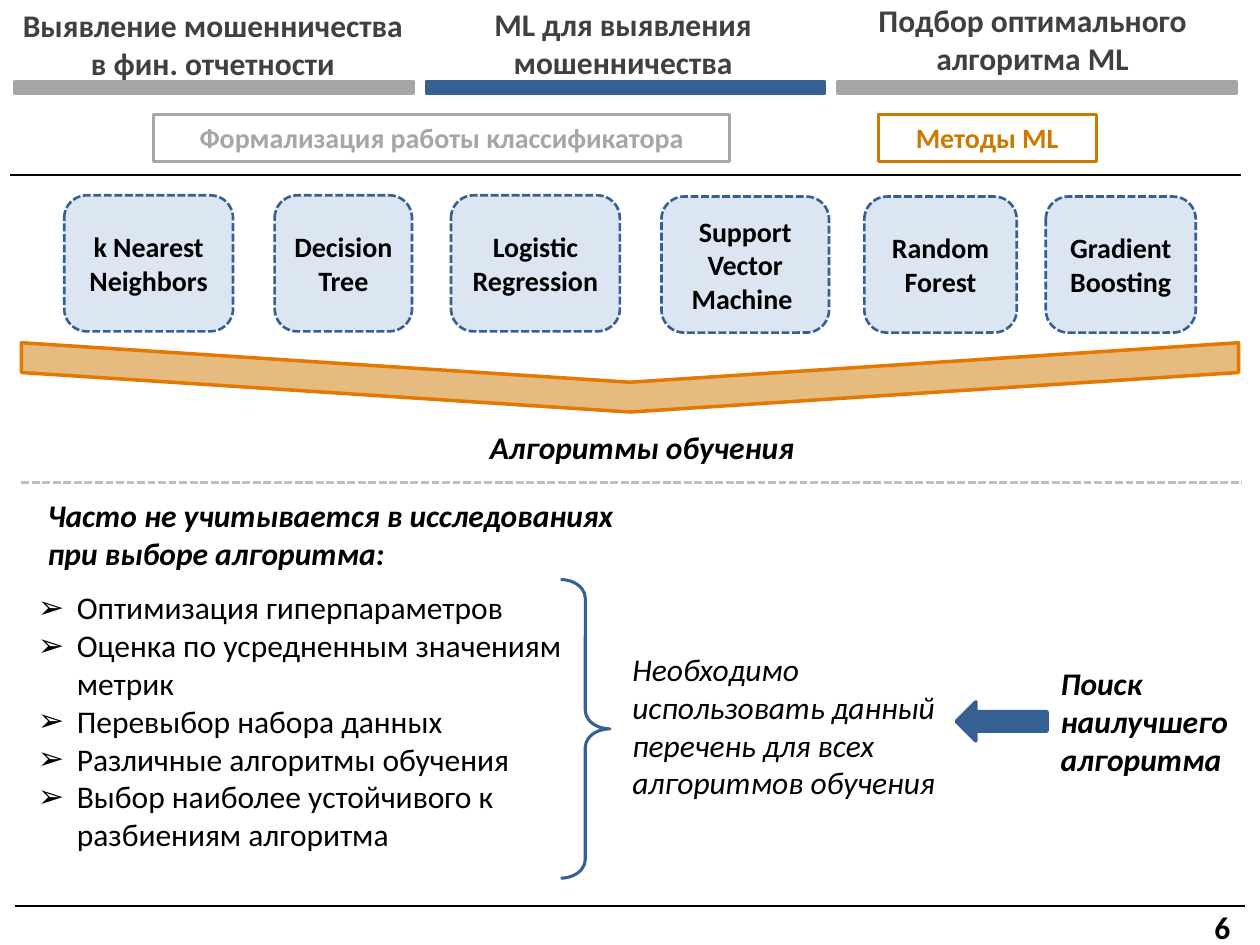
from dataclasses import dataclass
from typing import NamedTuple

from lxml.etree import SubElement
from pptx import Presentation
from pptx.dml.color import RGBColor as Rgb
from pptx.enum.dml import MSO_LINE as Dash
from pptx.enum.shapes import MSO_CONNECTOR as Conn, MSO_SHAPE as Kind
from pptx.enum.text import MSO_ANCHOR as Anchor, MSO_AUTO_SIZE as Fit, PP_ALIGN as Align
from pptx.oxml.ns import qn
from pptx.util import Inches, Pt

COLS, ROWS = 100, 75  # grid over the slide
WIDE, HIGH = Inches(10), Inches(7.5)


@dataclass(frozen=True)
class Theme:
    font: str = "Calibri"
    ink: str = "000000"
    head: str = "404040"
    gray: str = "A6A6A6"
    pale: str = "BFBFBF"
    blue: str = "376092"
    sky: str = "95B3D7"
    gold: str = "CC7900"
    rust: str = "E47802"
    body: int = 18
    label: int = 16
    thin: float = 1.5
    mid: float = 1.75
    bold: float = 2


T = Theme()


class Box(NamedTuple):
    """An area in grid columns and rows."""
    x: float
    y: float
    w: float
    h: float

    def cell(self, x, y, w, h):
        return Box(self.x + x, self.y + y, w, h)

    def emu(self):
        col, row = WIDE / COLS, HIGH / ROWS
        return [round(n * u) for n, u in zip(self, (col, row, col, row))]


def place(shape, box):
    shape.left, shape.top, shape.width, shape.height = box.emu()


def write(shape, lines, size=T.body, color=T.ink, bold=False, italic=False,
          align=Align.LEFT, anchor=Anchor.TOP):
    frame = shape.text_frame
    frame.text = "\n".join(lines)
    frame.word_wrap = True
    frame.auto_size = Fit.NONE
    frame.vertical_anchor = anchor
    for para in frame.paragraphs:
        para.alignment = align
        para.space_before = Pt(0)
        for run in para.runs:
            font = run.font
            font.name, font.size = T.font, Pt(size)
            font.bold, font.italic = bold, italic
            font.color.rgb = Rgb.from_string(color)


def label(slide, box, text, **style):
    write(slide.shapes.add_textbox(*box.emu()), [text], **style)


def stroke(line, color, width, dash=None):
    line.color.rgb = Rgb.from_string(color)
    line.width = Pt(width)
    if dash:
        line.dash_style = dash


def draw(slide, kind, box, line, width, fill=None, alpha=None, dash=None):
    shape = slide.shapes.add_shape(kind, *box.emu())
    shape.shadow.inherit = False
    stroke(shape.line, line, width, dash)
    if fill:
        shape.fill.solid()
        shape.fill.fore_color.rgb = Rgb.from_string(fill)
    else:
        shape.fill.background()
    if alpha:
        tint = shape._element.spPr.find(qn("a:solidFill"))[0]
        SubElement(tint, qn("a:alpha")).set("val", str(alpha * 1000))
    return shape


def turn(slide, kind, box, *args, **opts):
    """Draw a shape turned by 90 degrees so that it fills the box."""
    side = Box(box.x + (box.w - box.h) / 2, box.y + (box.h - box.w) / 2, box.h, box.w)
    shape = draw(slide, kind, side, *args, **opts)
    shape.rotation = 90
    return shape


def rule(slide, box, color=T.ink, dash=None):
    x, y, w, h = box.emu()
    line = slide.shapes.add_connector(Conn.STRAIGHT, x, y, x + w, y + h)
    stroke(line.line, color, T.thin, dash)
    SubElement(line._element.spPr, qn("a:effectLst"))


def tabs(slide, box):
    style = dict(color=T.head, bold=True, align=Align.CENTER)
    names = [("Выявление мошенничества в фин. отчетности", 0, 0, 33.8),
             ("ML для выявления мошенничества", 32.9, -0.1, 33.1),
             ("Подбор оптимального алгоритма ML", 65.4, -0.4, 33.1)]
    for i, (name, x, y, w) in enumerate(names):
        area = box.cell(x, y, w, 7.1)
        live = i == 1
        if live:
            place(slide.shapes.title, area)
            write(slide.shapes.title, [name], **style)
        else:
            label(slide, area, name, **style)
        color = T.blue if live else T.gray
        bar = box.cell(1.2 + i * 32.65, 6.5, 31.6, 0.9)
        draw(slide, Kind.RECTANGLE, bar, color, T.bold, color)


def steps(slide, box):
    for name, x, w, color in [("Формализация работы классификатора", 12.2, 45.7, T.gray),
                              ("Методы ML", 69.7, 17.3, T.gold)]:
        shape = draw(slide, Kind.RECTANGLE, box.cell(x, 0, w, 3.7), color, T.mid)
        write(shape, [name], T.label, color, bold=True, align=Align.CENTER)
    rule(slide, box.cell(0.8, 4.8, 97.7, 0))


def methods(slide, box):
    cards = [("k Nearest Neighbors", 5.1, 0, 13.4), ("Decision Tree", 21.8, 0, 10.9),
             ("Logistic Regression", 35.8, 0, 13.4), ("Support Vector Machine ", 52.5, 0.1, 13.3),
             ("Random Forest", 68.6, 0.1, 12.1), ("Gradient Boosting", 83, 0.1, 11.9)]
    for name, x, y, w in cards:
        card = draw(slide, Kind.ROUNDED_RECTANGLE, box.cell(x, y, w, 10.8), T.blue,
                    T.thin, T.sky, 32, Dash.SQUARE_DOT)
        write(card, [name], T.label, bold=True, align=Align.CENTER, anchor=Anchor.MIDDLE)
    funnel = turn(slide, Kind.CHEVRON, box.cell(1.7, 11.7, 96.6, 5.5), T.rust,
                  T.bold, T.gold, 50)
    funnel.adjustments[0] = 0.57
    label(slide, box.cell(37.9, 18, 27.3, 4), "Алгоритмы обучения", bold=True, italic=True)
    rule(slide, box.cell(1.7, 22.8, 96.9, 0), T.pale, Dash.SQUARE_DOT)


def bullets(shape, inset):
    for para in shape.text_frame.paragraphs:
        props = para._p.get_or_add_pPr()
        props.set("marL", str(inset))
        props.set("indent", str(-inset))
        SubElement(props, qn("a:buChar")).set("char", "➢")


def gaps(slide, box):
    """Neglected points on the left, the conclusion on the right."""
    label(slide, box.cell(2.8, 0, 47.4, 7.1),
          "Часто не учитывается в исследованиях при выборе алгоритма:", bold=True, italic=True)
    body = slide.placeholders[1]
    place(body, box.cell(2, 7.3, 43.7, 22.2))
    write(body, ["Оптимизация гиперпараметров",
                 "Оценка по усредненным значениям метрик",
                 "Перевыбор набора данных",
                 "Различные алгоритмы обучения",
                 "Выбор наиболее устойчивого к разбиениям алгоритма"])
    bullets(body, Inches(0.31))
    brace = draw(slide, Kind.RIGHT_BRACE, box.cell(44.5, 7.1, 3.9, 23.7), T.blue, T.mid)
    brace.adjustments[0], brace.adjustments[1] = 0.38, 0.5
    label(slide, box.cell(49.2, 12.2, 30.7, 13.1),
          "Необходимо использовать данный перечень для всех алгоритмов обучения", italic=True)
    turn(slide, Kind.DOWN_ARROW, box.cell(75.9, 16.8, 7.2, 3.1), T.blue, T.bold, T.blue)
    label(slide, box.cell(83.2, 13.3, 15.8, 10.1), "Поиск наилучшего алгоритма",
          bold=True, italic=True)


def footer(slide, box):
    rule(slide, box.cell(1.2, 0, 97.6, 0))
    label(slide, box.cell(95.4, -0.3, 3.8, 4), "6", bold=True)


def main():
    deck = Presentation()
    deck.slide_width, deck.slide_height = WIDE, HIGH
    slide = deck.slides.add_slide(deck.slide_layouts[1])
    tops = [(tabs, 0, 9.1), (steps, 9.1, 6.4), (methods, 15.5, 23.4),
            (gaps, 38.9, 33), (footer, 71.9, 3.1)]
    for region, y, h in tops:
        region(slide, Box(0, y, COLS, h))
    deck.save("out.pptx")


if __name__ == "__main__":
    main()
